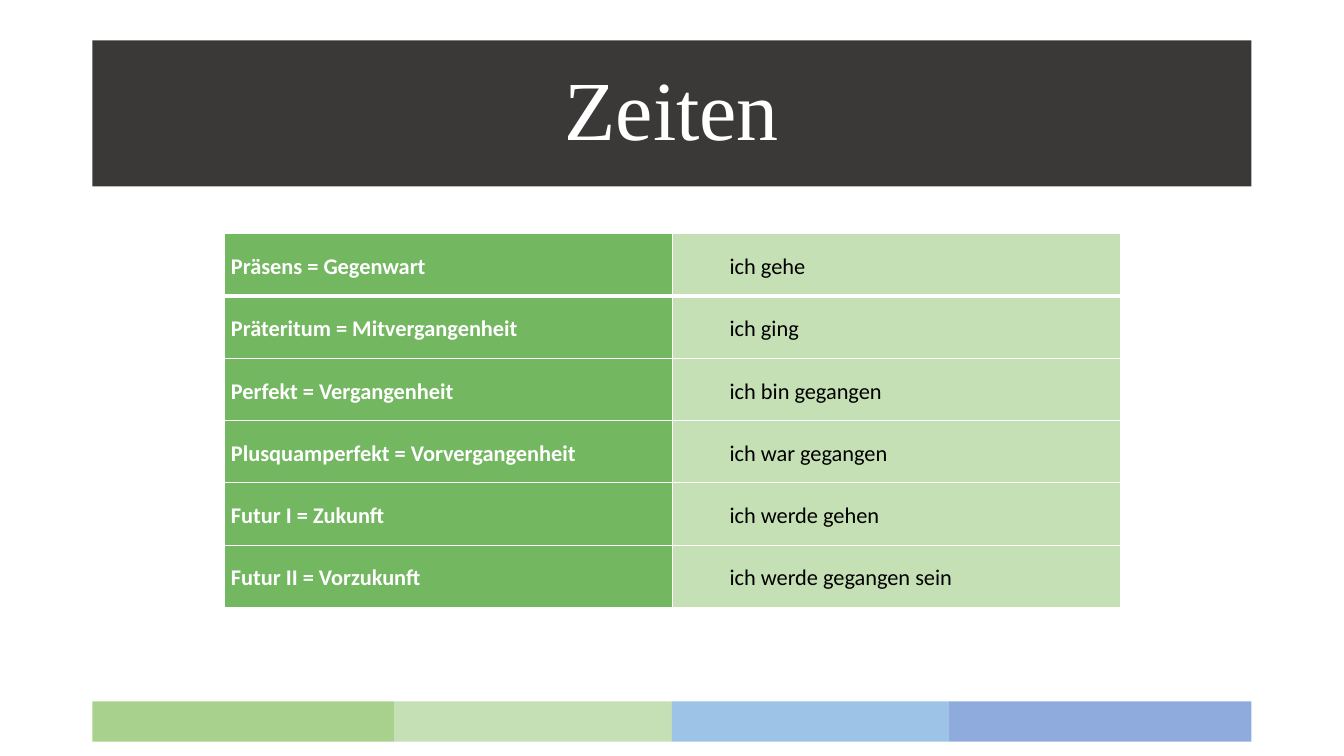
from itertools import accumulate

from pptx import Presentation
from pptx.dml.color import RGBColor
from pptx.enum.shapes import MSO_SHAPE
from pptx.enum.text import MSO_ANCHOR, PP_ALIGN
from pptx.oxml import parse_xml
from pptx.oxml.ns import nsdecls
from pptx.util import Pt

WHITE = RGBColor(0xFF, 0xFF, 0xFF)
BLACK = RGBColor(0x00, 0x00, 0x00)
CHARCOAL = RGBColor(0x3B, 0x38, 0x38)
GREEN = RGBColor(0x73, 0xB7, 0x61)
MID_GREEN = RGBColor(0xA9, 0xD1, 0x8E)
PALE_GREEN = RGBColor(0xC5, 0xE0, 0xB4)
LIGHT_BLUE = RGBColor(0x9D, 0xC3, 0xE6)
BLUE = RGBColor(0x8F, 0xAA, 0xDC)

TITLE = "Zeiten"
TENSES = [
    ("Präsens = Gegenwart", "ich gehe"),
    ("Präteritum = Mitvergangenheit", "ich ging"),
    ("Perfekt = Vergangenheit", "ich bin gegangen"),
    ("Plusquamperfekt = Vorvergangenheit", "ich war gegangen"),
    ("Futur I = Zukunft", "ich werde gehen"),
    ("Futur II = Vorzukunft", "ich werde gegangen sein"),
]
# fill, font colour, bold, left indent
COLUMN_STYLES = [(GREEN, WHITE, True, 0), (PALE_GREEN, BLACK, False, 36)]
FOOTER_BANDS = [(MID_GREEN, 216), (PALE_GREEN, 198), (LIGHT_BLUE, 198), (BLUE, 216)]

BAND_LEFT, BAND_WIDTH = 66, 828
TABLE_LEFT, TABLE_TOP = 160, 167
COLUMN_WIDTH, ROW_HEIGHT = 320.2, 44.5


def add_bar(slide, left, top, width, height, color):
    bar = slide.shapes.add_shape(
        MSO_SHAPE.RECTANGLE, Pt(left), Pt(top), Pt(width), Pt(height))
    bar.shadow.inherit = False
    bar.fill.solid()
    bar.fill.fore_color.rgb = color
    bar.line.fill.background()
    return bar


def style_run(run, font_name, size, color, bold=False):
    run.font.name = font_name
    run.font.size = Pt(size)
    run.font.color.rgb = color
    run.font.bold = bold


def add_borders(cell, top, bottom):
    """Draw white cell borders, 1 pt at the sides; call before setting the fill."""
    properties = cell._tc.get_or_add_tcPr()
    for side, width in (("L", 1), ("R", 1), ("T", top), ("B", bottom)):
        properties.append(parse_xml(
            f'<a:ln{side} {nsdecls("a")} w="{Pt(width)}"><a:solidFill>'
            f'<a:srgbClr val="{WHITE}"/></a:solidFill></a:ln{side}>'))


def fill_cell(cell, text, style):
    fill, color, bold, indent = style
    cell.fill.solid()
    cell.fill.fore_color.rgb = fill
    cell.vertical_anchor = MSO_ANCHOR.MIDDLE
    cell.margin_left = cell.margin_right = Pt(5)
    cell.margin_top = cell.margin_bottom = Pt(0)
    paragraph = cell.text_frame.paragraphs[0]
    paragraph.text = text
    paragraph.line_spacing = 1.15
    paragraph._p.get_or_add_pPr().set("marL", str(Pt(indent)))
    style_run(paragraph.runs[0], "Calibri", 16, color, bold)


def add_title(slide):
    bar = add_bar(slide, BAND_LEFT, 28.8, BAND_WIDTH, 104.4, CHARCOAL)
    bar.text_frame.vertical_anchor = MSO_ANCHOR.MIDDLE
    paragraph = bar.text_frame.paragraphs[0]
    paragraph.text = TITLE
    paragraph.alignment = PP_ALIGN.CENTER
    paragraph.line_spacing = 0.9
    style_run(paragraph.runs[0], "Times New Roman", 60, WHITE)


def add_tense_table(slide):
    rows, columns = len(TENSES), len(COLUMN_STYLES)
    table = slide.shapes.add_table(
        rows, columns, Pt(TABLE_LEFT), Pt(TABLE_TOP),
        Pt(columns * COLUMN_WIDTH), Pt(rows * ROW_HEIGHT)).table
    table.horz_banding = False
    for column in table.columns:
        column.width = Pt(COLUMN_WIDTH)
    for row_index, texts in enumerate(TENSES):
        table.rows[row_index].height = Pt(ROW_HEIGHT)
        top = 3 if row_index == 1 else 1
        bottom = 3 if row_index == 0 else 1
        for column_index, text in enumerate(texts):
            cell = table.cell(row_index, column_index)
            add_borders(cell, top, bottom)
            fill_cell(cell, text, COLUMN_STYLES[column_index])


def add_footer(slide):
    lefts = accumulate((width for _, width in FOOTER_BANDS), initial=BAND_LEFT)
    for left, (color, width) in zip(lefts, FOOTER_BANDS):
        add_bar(slide, left, 501, width, 28.8, color)


def main():
    presentation = Presentation()
    presentation.slide_width = Pt(960)
    presentation.slide_height = Pt(540)
    slide = presentation.slides.add_slide(presentation.slide_layouts[6])
    add_footer(slide)
    add_title(slide)
    add_tense_table(slide)
    presentation.save("out.pptx")


if __name__ == "__main__":
    main()
